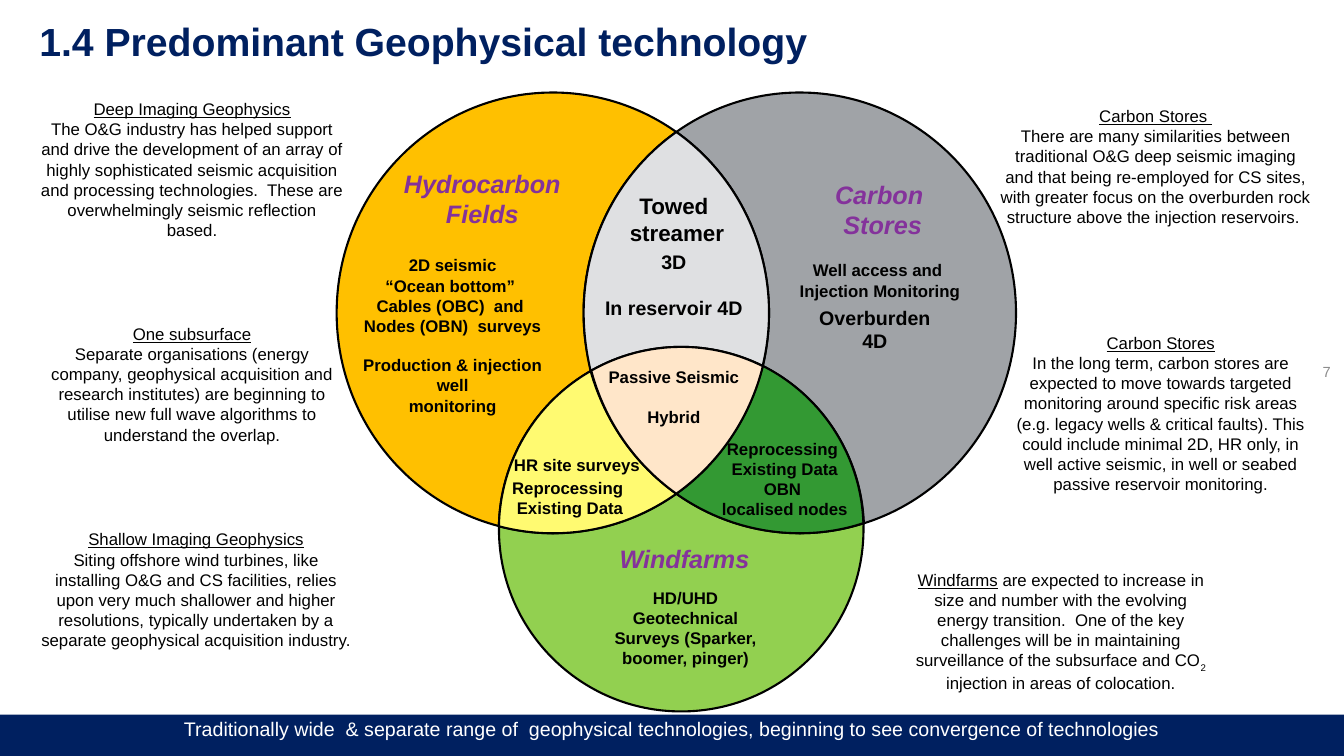
from dataclasses import dataclass
from itertools import pairwise
from math import atan2, cos, pi, sin, tan

from lxml.etree import SubElement
from pptx import Presentation
from pptx.dml.color import RGBColor
from pptx.enum.text import MSO_ANCHOR, MSO_AUTO_SIZE, PP_ALIGN
from pptx.oxml.ns import qn
from pptx.util import Pt


@dataclass(frozen=True)
class Theme:
    font: str = "Arial"
    navy: str = "002060"
    white: str = "FFFFFF"
    black: str = "000000"
    purple: str = "84329B"
    number_grey: str = "8C8C8C"
    regions: tuple = ("FFC000", "A0A3A7", "92D050", "DFE0E2", "FFFA71", "339933", "FFE6C9")
    title: float = 28
    name: float = 18
    large: float = 16
    medium: float = 14
    text: float = 12
    number: float = 10.5


THEME = Theme()
TIGHT, ROOMY = (0, 0, 7.2, 3.6), (7.2, 3.6, 7.2, 3.6)

# Circles: centre x, centre y, radius x, radius y
HYDROCARBON = (394.9, 223.5, 154.4, 157.4)
CARBON = (571.3, 223.5, 154.4, 157.4)
WIND = (486.6, 378, 130.2, 130.2)

# Points where the circles cross
TOP, BOTTOM = (483.1, 94.3), (483.1, 352.7)
INNER_LEFT, INNER_RIGHT = (421.9, 265), (545, 261.4)
FOOT_LEFT, FOOT_RIGHT = (356.4, 375.8), (617, 373.7)

# Regions: first point, then arcs (circle, end point, 1 = clockwise)
REGIONS = [
    (FOOT_LEFT, [(HYDROCARBON, TOP, 1), (CARBON, INNER_LEFT, -1), (WIND, FOOT_LEFT, -1)]),
    (TOP, [(CARBON, FOOT_RIGHT, 1), (WIND, INNER_RIGHT, -1), (HYDROCARBON, TOP, -1)]),
    (FOOT_RIGHT, [(WIND, FOOT_LEFT, 1), (HYDROCARBON, BOTTOM, -1), (CARBON, FOOT_RIGHT, -1)]),
    (TOP, [(HYDROCARBON, INNER_RIGHT, 1), (WIND, INNER_LEFT, -1), (CARBON, TOP, 1)]),
    (INNER_LEFT, [(CARBON, BOTTOM, -1), (HYDROCARBON, FOOT_LEFT, 1), (WIND, INNER_LEFT, 1)]),
    (INNER_RIGHT, [(WIND, FOOT_RIGHT, 1), (CARBON, BOTTOM, 1), (HYDROCARBON, INNER_RIGHT, -1)]),
    (INNER_LEFT, [(WIND, INNER_RIGHT, 1), (HYDROCARBON, BOTTOM, 1), (CARBON, INNER_LEFT, 1)]),
]

# Circle names: position, lines
NAMES = [
    ((288, 120.2, 120.2, 47.5), ["Hydrocarbon", "Fields"]),
    ((596.2, 128.2, 75.6, 47.5), ["Carbon ", "Stores"]),
    ((442.1, 388.1, 100.8, 25.2), ["Windfarms"]),
]

# Labels: position, insets, wrap, size, lines, index of the line after a gap
LABELS = [
    ((449.3, 137.5, 75.6, 42.5), TIGHT, False, THEME.large, ["Towed ", "streamer"], None),
    ((258.5, 182.2, 136.8, 120.2), TIGHT, False, THEME.text,
     ["2D seismic", "“Ocean bottom” ", "Cables (OBC)  and ", "Nodes (OBN)  surveys",
      "Production & injection", " well ", "monitoring"], 4),
    ((432, 178.6, 105.8, 54.7), TIGHT, False, THEME.medium, ["3D", "In reservoir 4D"], 1),
    ((570.2, 185.8, 123.8, 32.4), TIGHT, False, THEME.text, ["Well access and ", "Injection Monitoring"], None),
    ((401.8, 258.5, 159.1, 51.1), ROOMY, True, THEME.text, ["Passive Seismic", "Hybrid"], 1),
    ((436.3, 419.8, 113.8, 61.9), TIGHT, True, THEME.text,
     ["HD/UHD Geotechnical Surveys (Sparker, boomer, pinger)"], None),
    ((481, 309.6, 159.1, 65.5), ROOMY, True, THEME.text,
     ["Reprocessing ", "Existing Data", "OBN ", "localised nodes"], None),
    ((327.6, 337.7, 159.1, 36), ROOMY, True, THEME.text, ["Reprocessing ", "Existing Data"], None),
    ((332.6, 321.1, 159.1, 21.6), ROOMY, True, THEME.text, ["HR site surveys"], None),
    ((584.6, 218.2, 87.8, 37.4), TIGHT, True, THEME.medium, ["Overburden", "4D"], None),
]

# Side notes: position, underlined heading, text
NOTES = [
    ((28.8, 70.6, 223.9, 90.7), "Deep Imaging Geophysics",
     "The O&G industry has helped support and drive the development of an array of highly sophisticated "
     "seismic acquisition and processing technologies.  These are overwhelmingly seismic reflection based."),
    ((28.8, 231.1, 223.9, 76.3), "One subsurface",
     "Separate organisations (energy company, geophysical acquisition and research institutes) are "
     "beginning to utilise new full wave algorithms to understand the overlap."),
    ((28.8, 378, 229.7, 90.7), "Shallow Imaging Geophysics",
     "Siting offshore wind turbines, like installing O&G and CS facilities, relies upon very much shallower "
     "and higher resolutions, typically undertaken by a separate geophysical acquisition industry."),
    ((713.5, 75.6, 231.1, 105.1), "Carbon Stores ",
     "There are many similarities between traditional O&G deep seismic imaging and that being re-employed "
     "for CS sites, with greater focus on the overburden rock structure above the injection reservoirs. "),
    ((720.7, 237.6, 223.9, 134.6), "Carbon Stores",
     "In the long term, carbon stores are expected to move towards targeted monitoring around specific risk "
     "areas (e.g. legacy wells & critical faults). This could include minimal 2D, HR only, in well active "
     "seismic, in well or seabed passive reservoir monitoring."),
]


def apply(target, values):
    for name, value in values.items():
        setattr(target, name, value)


def set_frame(box, position, insets=TIGHT, wrap=True, fit=MSO_AUTO_SIZE.NONE, anchor=MSO_ANCHOR.TOP):
    frame = box.text_frame
    apply(frame, {"auto_size": fit, "word_wrap": wrap, "vertical_anchor": anchor})
    apply(frame, dict(zip(("margin_left", "margin_top", "margin_right", "margin_bottom"), map(Pt, insets))))
    apply(box, dict(zip(("left", "top", "width", "height"), map(Pt, position))))
    return frame


def add_box(shapes, position, insets=TIGHT, wrap=True):
    box = shapes.add_textbox(*map(Pt, position))
    return set_frame(box, position, insets, wrap, MSO_AUTO_SIZE.SHAPE_TO_FIT_TEXT)


def add_span(para, text, size, color=THEME.black, **styles):
    span = para.add_run()
    span.text = text
    apply(span.font, {"name": THEME.font, "size": Pt(size), **styles})
    span.font.color.rgb = RGBColor.from_string(color)
    return span


def add_lines(frame, lines, size, gap_line=None, **styles):
    for index, line in enumerate(lines):
        para = frame.add_paragraph() if index else frame.paragraphs[0]
        para.alignment = PP_ALIGN.CENTER
        if index == gap_line:
            para.space_before = Pt(round(size * 1.15, 1))
        add_span(para, line, size, bold=True, **styles)


def add_note(shapes, position, heading, text):
    frame = add_box(shapes, position)
    for para, line, underline in ((frame.paragraphs[0], heading, True), (frame.add_paragraph(), text, False)):
        para.alignment = PP_ALIGN.CENTER
        add_span(para, line, THEME.text, underline=underline)


def add_windfarm_note(shapes):
    para = add_box(shapes, (649.4, 406.8, 223.9, 90.7)).paragraphs[0]
    para.alignment = PP_ALIGN.CENTER
    add_span(para, "Windfarms", THEME.text, underline=True)
    add_span(para, " are expected to increase in size and number with the evolving energy transition.  One of the "
             "key challenges will be in maintaining surveillance of the subsurface and CO", THEME.text)
    add_span(para, "2", THEME.text)._r.get_or_add_rPr().set("baseline", "-25000")
    add_span(para, " injection in areas of colocation.", THEME.text)


def curve_points(circle, start, end, direction):
    """Bezier points of an arc, cut at the quarters of its circle."""
    x, y, wide, high = circle
    first, last = (atan2((v - y) / high, (u - x) / wide) for u, v in (start, end))
    last = first + direction * ((direction * (last - first)) % (2 * pi))
    quarters = [k * pi / 2 for k in range(-8, 9) if min(first, last) < k * pi / 2 < max(first, last)]
    points = []
    for a, b in pairwise([first, *quarters[::direction], last]):
        pull = 4 / 3 * tan((b - a) / 4)
        for angle, reach in ((a, pull), (b, -pull), (b, 0)):
            points.append((Pt(x + wide * (cos(angle) - reach * sin(angle))),
                           Pt(y + high * (sin(angle) + reach * cos(angle)))))
    return points


def add_region(shapes, color, start, arcs):
    points, corner = [], start
    for circle, end, direction in arcs:
        points += curve_points(circle, corner, end, direction)
        corner = end
    builder = shapes.build_freeform(*map(Pt, start))
    builder.add_line_segments(points, close=True)
    region = builder.convert_to_shape()
    # Every three points become one curve
    outline = region._element.find(".//" + qn("a:path"))
    segments = outline.findall(qn("a:lnTo"))
    for curve, *others in zip(segments[::3], segments[1::3], segments[2::3]):
        curve.tag = qn("a:cubicBezTo")
        for other in others:
            curve.append(other[0])
            outline.remove(other)
    region.shadow.inherit = False
    region.fill.solid()
    region.fill.fore_color.rgb = RGBColor.from_string(color)
    region.line.color.rgb = RGBColor.from_string(THEME.black)
    region.line.width = Pt(1.5)


def fill_title(box):
    para = set_frame(box, (28.1, 20.2, 576, 25.9), anchor=MSO_ANCHOR.MIDDLE).paragraphs[0]
    apply(para, {"alignment": PP_ALIGN.LEFT, "line_spacing": 0.9})
    add_span(para, "1.4 Predominant Geophysical technology", THEME.title, THEME.navy, bold=True)


def fill_banner(box):
    para = set_frame(box, (0, 510.5, 960, 29.5), ROOMY).paragraphs[0]
    box.fill.solid()
    box.fill.fore_color.rgb = RGBColor.from_string(THEME.navy)
    apply(para, {"alignment": PP_ALIGN.CENTER, "line_spacing": 0.9, "space_before": Pt(0)})
    properties = para._p.get_or_add_pPr()
    for name in ("marL", "indent"):
        properties.set(name, "0")
    SubElement(properties, qn("a:buNone"))
    add_span(para, "Traditionally wide  & separate range of  geophysical technologies, beginning to see "
             "convergence of technologies", THEME.medium, THEME.white)


def add_page_number(shapes):
    position = (905, 248.4, 52.6, 34.6)
    box = shapes.add_textbox(*map(Pt, position))
    para = set_frame(box, position, ROOMY, anchor=MSO_ANCHOR.MIDDLE).paragraphs[0]
    para.alignment = PP_ALIGN.RIGHT
    add_span(para, "7", THEME.number, THEME.number_grey)


def main():
    deck = Presentation()
    apply(deck, {"slide_width": Pt(960), "slide_height": Pt(540)})
    page = deck.slides.add_slide(deck.slide_layouts[1])
    fill_title(page.shapes.title)
    fill_banner(page.placeholders[1])
    # Venn diagram
    diagram = page.shapes.add_group_shape().shapes
    for color, region in zip(THEME.regions, REGIONS):
        add_region(diagram, color, *region)
    for position, lines in NAMES:
        add_lines(add_box(diagram, position, wrap=False), lines, THEME.name, color=THEME.purple, italic=True)
    for position, insets, wrap, size, lines, gap_line in LABELS:
        add_lines(add_box(diagram, position, insets, wrap), lines, size, gap_line)
    # Side notes and page number
    for note in NOTES:
        add_note(page.shapes, *note)
    add_windfarm_note(page.shapes)
    add_page_number(page.shapes)
    deck.save("out.pptx")


if __name__ == "__main__":
    main()
